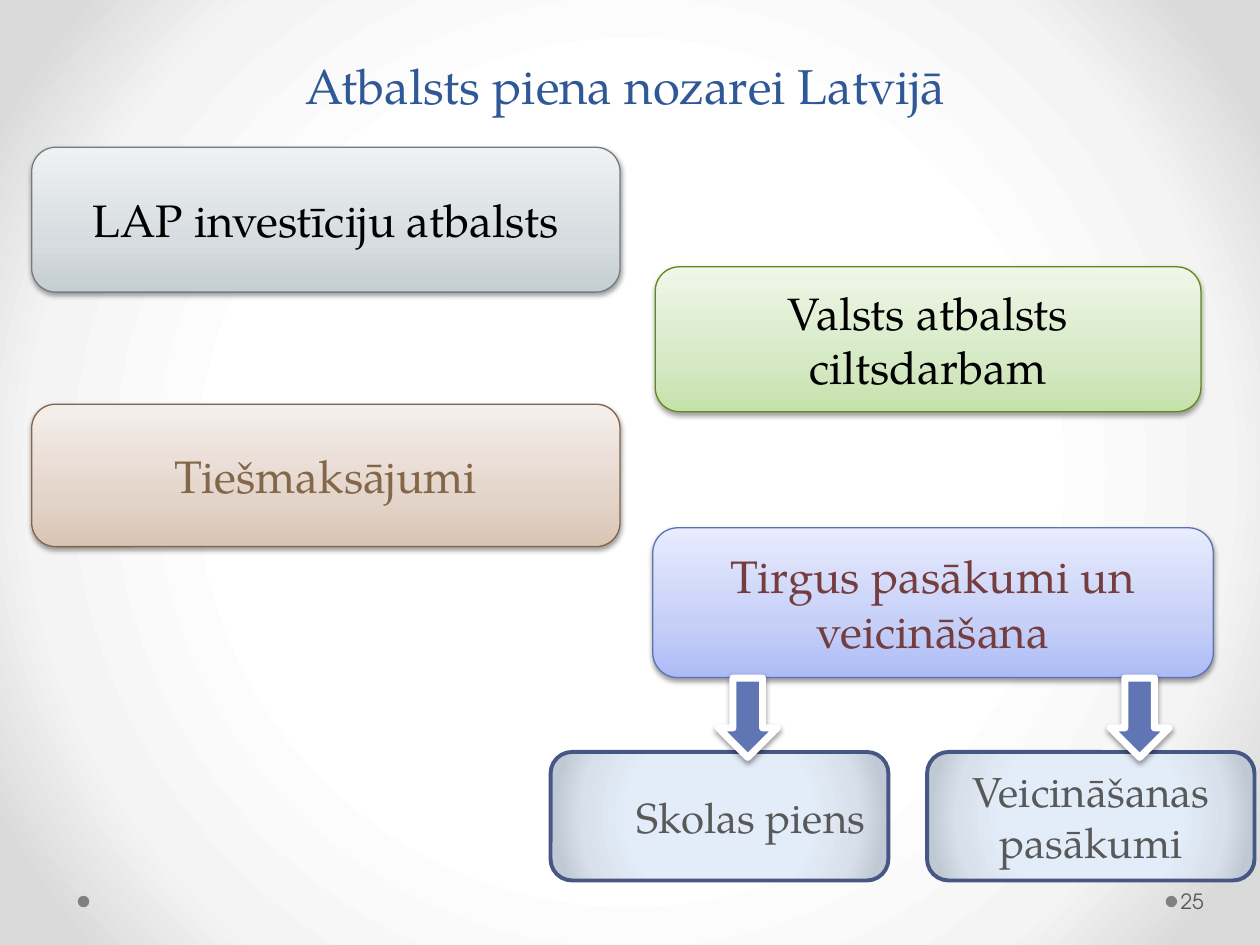
from lxml.etree import SubElement as Sub
from pptx import Presentation
from pptx.dml.color import RGBColor
from pptx.enum.shapes import MSO_SHAPE as Kind
from pptx.enum.text import MSO_ANCHOR as Anchor, MSO_AUTO_SIZE as Fit, PP_ALIGN as Align
from pptx.oxml.ns import qn
from pptx.util import Cm, Pt

SERIF = "TeX Gyre Pagella"
SANS = "TeX Gyre Adventor"
BLACK = RGBColor(0x00, 0x00, 0x00)
WHITE = RGBColor(0xFF, 0xFF, 0xFF)
GREY = RGBColor(0x59, 0x59, 0x59)
DOT = RGBColor(0x80, 0x80, 0x80)
NAVY = RGBColor(0x2F, 0x58, 0x97)
BROWN = RGBColor(0x84, 0x66, 0x48)
WINE = RGBColor(0x75, 0x3D, 0x3D)
BLUE = RGBColor(0x60, 0x76, 0xB4)
SLATE_EDGE = RGBColor(0x72, 0x7D, 0x82)
TAN_EDGE = RGBColor(0x83, 0x64, 0x45)
BLUE_EDGE = RGBColor(0x5C, 0x72, 0xB2)
GREEN_EDGE = RGBColor(0x62, 0x89, 0x1C)
DEEP_EDGE = RGBColor(0x47, 0x57, 0x85)
SLATE = [RGBColor(0xC5, 0xCE, 0xD2), RGBColor(0xD6, 0xDC, 0xDF), RGBColor(0xEF, 0xF2, 0xF3)]
TAN = [RGBColor(0xDA, 0xC4, 0xB4), RGBColor(0xE4, 0xD5, 0xCB), RGBColor(0xF5, 0xEF, 0xEB)]
SKY = [RGBColor(0xAD, 0xBB, 0xF6), RGBColor(0xC5, 0xCF, 0xF8), RGBColor(0xE8, 0xEC, 0xFD)]
GREEN = [RGBColor(0xC5, 0xE1, 0xAB), RGBColor(0xD6, 0xE9, 0xC5), RGBColor(0xEF, 0xF7, 0xE9)]
ICE = [RGBColor(0xE3, 0xED, 0xF9), RGBColor(0xD8, 0xE0, 0xEB), RGBColor(0xBF, 0xC9, 0xD4)]
PAPER = [WHITE, RGBColor(0xF4, 0xF4, 0xF4), RGBColor(0xDA, 0xDA, 0xDA)]


def blend(item, fill, hues, radial=False):
    """Give a shape or background a three-stop gradient, upward or radial."""
    fill.gradient()
    grad = next(item.element.iter(qn("a:gradFill")))
    for old in list(grad):
        grad.remove(old)
    stops = Sub(grad, qn("a:gsLst"))
    for place, hue in zip((50, 76, 92) if radial else (0, 35, 100), hues):
        stop = Sub(stops, qn("a:gs"), pos=str(place * 1000))
        Sub(stop, qn("a:srgbClr"), val=str(hue))
    if radial:
        ring = Sub(grad, qn("a:path"), path="circle")
        Sub(ring, qn("a:fillToRect"), l="50000", t="50000", r="50000", b="50000")
    else:
        Sub(grad, qn("a:lin"), ang="16200000", scaled="0")


def shade(shape):
    """Drop a soft black shadow below a shape."""
    glow = next(shape.element.iter(qn("a:effectLst")))
    drop = Sub(glow, qn("a:outerShdw"), blurRad=str(Pt(3.1)), dist=str(Pt(1.6)),
               dir="5400000", rotWithShape="0")
    hue = Sub(drop, qn("a:srgbClr"), val=str(BLACK))
    Sub(hue, qn("a:alpha"), val="38000")


def write(shape, text, size=26, font=SERIF, color=BLACK, align=Align.CENTER,
          anchor=Anchor.MIDDLE, pitch=None, indent=None):
    """Put one formatted paragraph into a shape."""
    frame = shape.text_frame
    frame.word_wrap = True
    frame.auto_size = Fit.NONE
    frame.vertical_anchor = anchor
    para = frame.paragraphs[0]
    para.alignment = align
    if pitch:
        para.line_spacing = Pt(pitch)
    if indent:
        props = para._p.get_or_add_pPr()
        props.set("marL", str(indent))
        props.set("indent", "0")
    run = para.add_run()
    run.text = text
    run.font.size = Pt(size)
    run.font.name = font
    run.font.color.rgb = color


def draw(slide, kind, spot, edge=None, width=0.75):
    """Add a preset shape with a plain outline or none."""
    shape = slide.shapes.add_shape(kind, *map(Cm, spot))
    shape.shadow.inherit = False
    if edge is None:
        shape.line.fill.background()
    else:
        shape.line.color.rgb = edge
        shape.line.width = Pt(width)
    return shape


def card(slide, text, spot, hues, edge, color=BLACK):
    """Add a shaded card for one kind of support."""
    shape = draw(slide, Kind.ROUNDED_RECTANGLE, spot, edge)
    blend(shape, shape.fill, hues)
    shade(shape)
    write(shape, text, color=color)


def branch(slide, text, left, width, indent=None):
    """Add a framed card for one market measure."""
    spot = (left, 15.16, width, 2.59)
    shape = draw(slide, Kind.ROUNDED_RECTANGLE, spot, DEEP_EDGE, 2.25)
    blend(shape, shape.fill, ICE, radial=True)
    write(shape, text, size=24, color=GREY, indent=indent)


def arrow(slide, left):
    """Add a white-edged block arrow pointing down."""
    shape = draw(slide, Kind.DOWN_ARROW, (left, 13.67, 1.19, 1.6), WHITE, 4)
    shape.fill.solid()
    shape.fill.fore_color.rgb = BLUE
    shade(shape)


def dot(slide, left):
    """Add a small footer dot."""
    shape = draw(slide, Kind.OVAL, (left, 18.06, 0.23, 0.23))
    shape.fill.solid()
    shape.fill.fore_color.rgb = DOT


def head(slide, text):
    """Place and fill the title."""
    title = slide.shapes.title
    title.left, title.top, title.width, title.height = map(Cm, (1.3, 0.43, 22.86, 2.01))
    write(title, text, size=28, color=NAVY, anchor=Anchor.BOTTOM, pitch=58)


def folio(slide, text):
    """Add the page number."""
    box = slide.shapes.add_textbox(*map(Cm, (23.72, 17.65, 1.55, 1.02)))
    box.text_frame.margin_left = Cm(0.08)
    box.text_frame.margin_right = Cm(0.13)
    write(box, text, size=12, font=SANS, color=GREY, align=Align.LEFT)


def main():
    """Build the slide and save it."""
    deck = Presentation()
    deck.slide_width, deck.slide_height = Cm(25.4), Cm(19.05)
    slide = deck.slides.add_slide(deck.slide_layouts[5])
    blend(slide, slide.background.fill, PAPER, radial=True)
    for left in (23.5, 1.57):
        dot(slide, left)
    head(slide, "Atbalsts piena nozarei Latvijā ")
    folio(slide, "25")
    card(slide, "LAP investīciju atbalsts", (0.64, 2.97, 11.86, 2.92), SLATE, SLATE_EDGE)
    card(slide, "Tiešmaksājumi", (0.64, 8.15, 11.86, 2.87), TAN, TAN_EDGE, BROWN)
    card(slide, "Tirgus pasākumi un veicināšana", (13.16, 10.64, 11.3, 3.02),
         SKY, BLUE_EDGE, WINE)
    branch(slide, "Veicināšanas pasākumi", 18.69, 6.6)
    branch(slide, "Skolas piens", 11.1, 6.81, indent=Cm(1.27))
    for left in (14.48, 22.38):
        arrow(slide, left)
    card(slide, "Valsts atbalsts ciltsdarbam", (13.21, 5.38, 11, 2.92), GREEN, GREEN_EDGE)
    deck.save("out.pptx")


if __name__ == "__main__":
    main()
